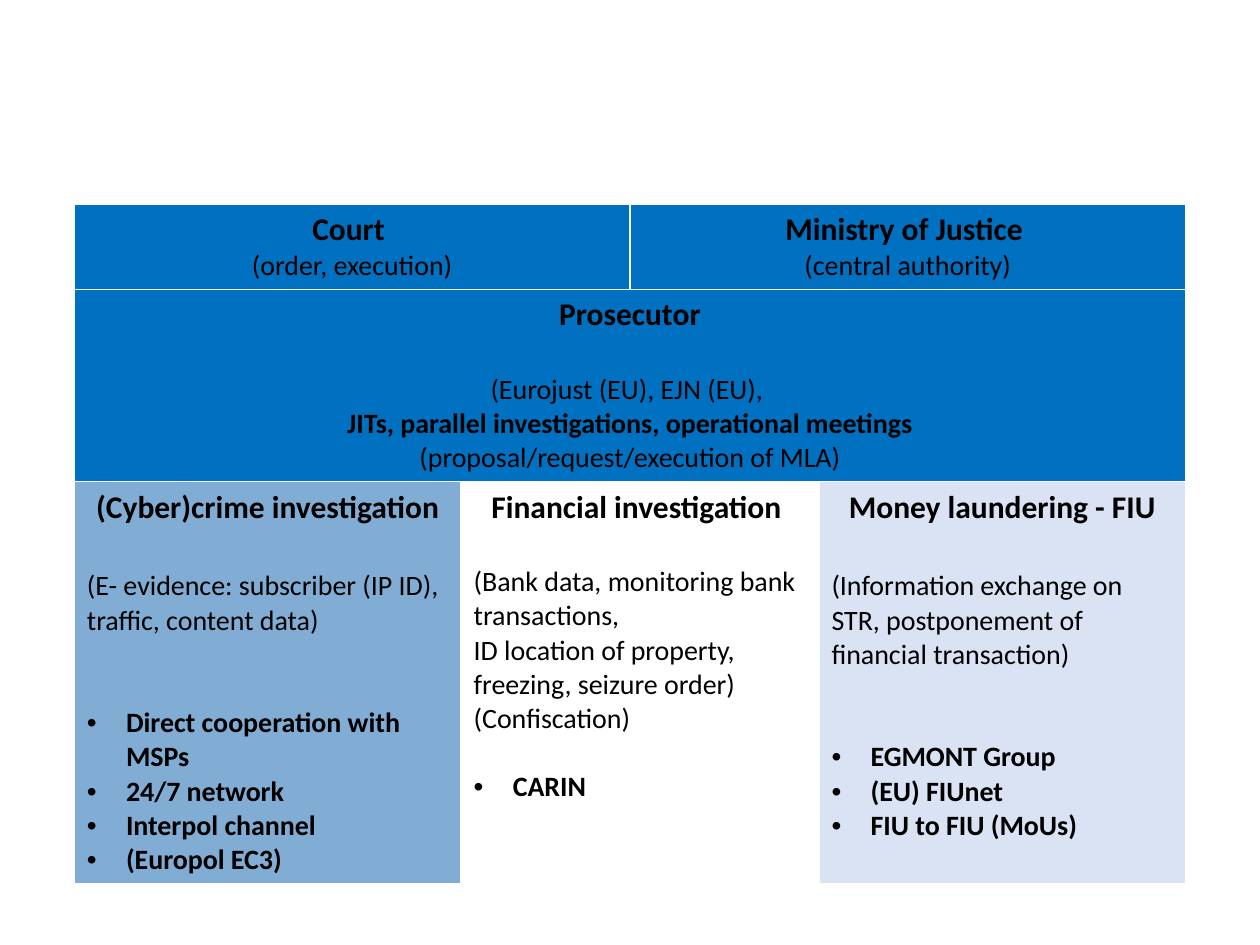
from lxml.etree import SubElement
from pptx import Presentation
from pptx.dml.color import RGBColor
from pptx.enum.text import PP_ALIGN as Align
from pptx.oxml import parse_xml
from pptx.oxml.ns import nsdecls, qn
from pptx.util import Inches, Pt

BLACK = RGBColor(0x00, 0x00, 0x00)
BLUE = RGBColor(0x00, 0x70, 0xC0)
MID_BLUE = RGBColor(0x81, 0xAD, 0xD5)
PALE_BLUE = RGBColor(0xDA, 0xE3, 0xF3)

WIDTHS = [3.07, 1.34, 1.5, 2.91]
HEIGHTS = [0.67, 1.5, 3.17]
STYLES = {
    "title": (18, True),
    "plain": (16, False),
    "strong": (16, True),
    "bullet": (16, True),
}

CELLS = [
    (0, 0, 1, BLUE, True, [
        ("title", "Court ", 0),
        ("plain", "(order, execution)", 0),
    ]),
    (0, 2, 3, BLUE, True, [
        ("title", "Ministry of Justice ", 0),
        ("plain", "(central authority)", 0),
    ]),
    (1, 0, 3, BLUE, True, [
        ("title", "Prosecutor", 0),
        ("plain", "(Eurojust (EU), EJN (EU), ", 22),
        ("strong", "JITs, parallel investigations, operational meetings", 0),
        ("plain", "(proposal/request/execution of MLA)", 0),
    ]),
    (2, 0, 0, MID_BLUE, False, [
        ("title", "(Cyber)crime investigation", 0),
        ("plain", "(E- evidence: subscriber (IP ID), traffic, content data)", 24.4),
        ("bullet", "Direct cooperation with MSPs", 39),
        ("bullet", "24/7 network", 0),
        ("bullet", "Interpol channel", 0),
        ("bullet", "(Europol EC3)", 0),
    ]),
    (2, 1, 2, None, False, [
        ("title", "Financial investigation ", 0),
        ("plain", "(Bank data, monitoring bank transactions,", 22),
        ("plain", "ID location of property,", 0),
        ("plain", "freezing, seizure order)", 0),
        ("plain", "(Confiscation)", 0),
        ("bullet", "CARIN", 19.5),
    ]),
    (2, 3, 3, PALE_BLUE, False, [
        ("title", "Money laundering - FIU", 0),
        ("plain", "(Information exchange on STR, postponement of financial transaction)", 24.4),
        ("bullet", "EGMONT Group", 39),
        ("bullet", "(EU) FIUnet", 0),
        ("bullet", "FIU to FIU (MoUs)", 0),
    ]),
]


def add_borders(cell):
    properties = cell._tc.get_or_add_tcPr()
    for index, side in enumerate(("lnL", "lnR", "lnT", "lnB")):
        properties.insert(index, parse_xml(
            f'<a:{side} {nsdecls("a")} w="{Pt(1)}"><a:solidFill>'
            f'<a:srgbClr val="FFFFFF"/></a:solidFill></a:{side}>'))


def add_bullet(para):
    properties = para._p.get_or_add_pPr()
    properties.set("marL", str(Inches(0.31)))
    properties.set("indent", str(-Inches(0.31)))
    SubElement(properties, qn("a:buFont")).set("typeface", "Arial")
    SubElement(properties, qn("a:buChar")).set("char", "•")


deck = Presentation()
deck.slide_width, deck.slide_height = Inches(10), Inches(7.5)
page = deck.slides.add_slide(deck.slide_layouts[6])

table = page.shapes.add_table(
    len(HEIGHTS), len(WIDTHS), Inches(0.59), Inches(1.62),
    Inches(sum(WIDTHS)), Inches(sum(HEIGHTS))).table
table.first_row = False
table.horz_banding = False
for column, width in zip(table.columns, WIDTHS):
    column.width = Inches(width)
for row, height in zip(table.rows, HEIGHTS):
    row.height = Inches(height)

for row, first, last, color, centered, lines in CELLS:
    cell = table.cell(row, first)
    if last > first:
        cell.merge(table.cell(row, last))
    for column in range(first, last + 1):
        part = table.cell(row, column)
        if color is None:
            part.fill.background()
        else:
            part.fill.solid()
            part.fill.fore_color.rgb = color
        add_borders(part)

    frame = cell.text_frame
    frame.text = "\n".join(text for style, text, gap in lines)
    for para, (style, text, gap) in zip(frame.paragraphs, lines):
        if style == "bullet":
            add_bullet(para)
        para.alignment = Align.CENTER if centered or style == "title" else Align.LEFT
        if gap:
            para.space_before = Pt(gap)
        span = para.runs[0]
        size, bold = STYLES[style]
        span.font.name = "Calibri"
        span.font.size = Pt(size)
        span.font.bold = bold
        span.font.color.rgb = BLACK

deck.save("out.pptx")
